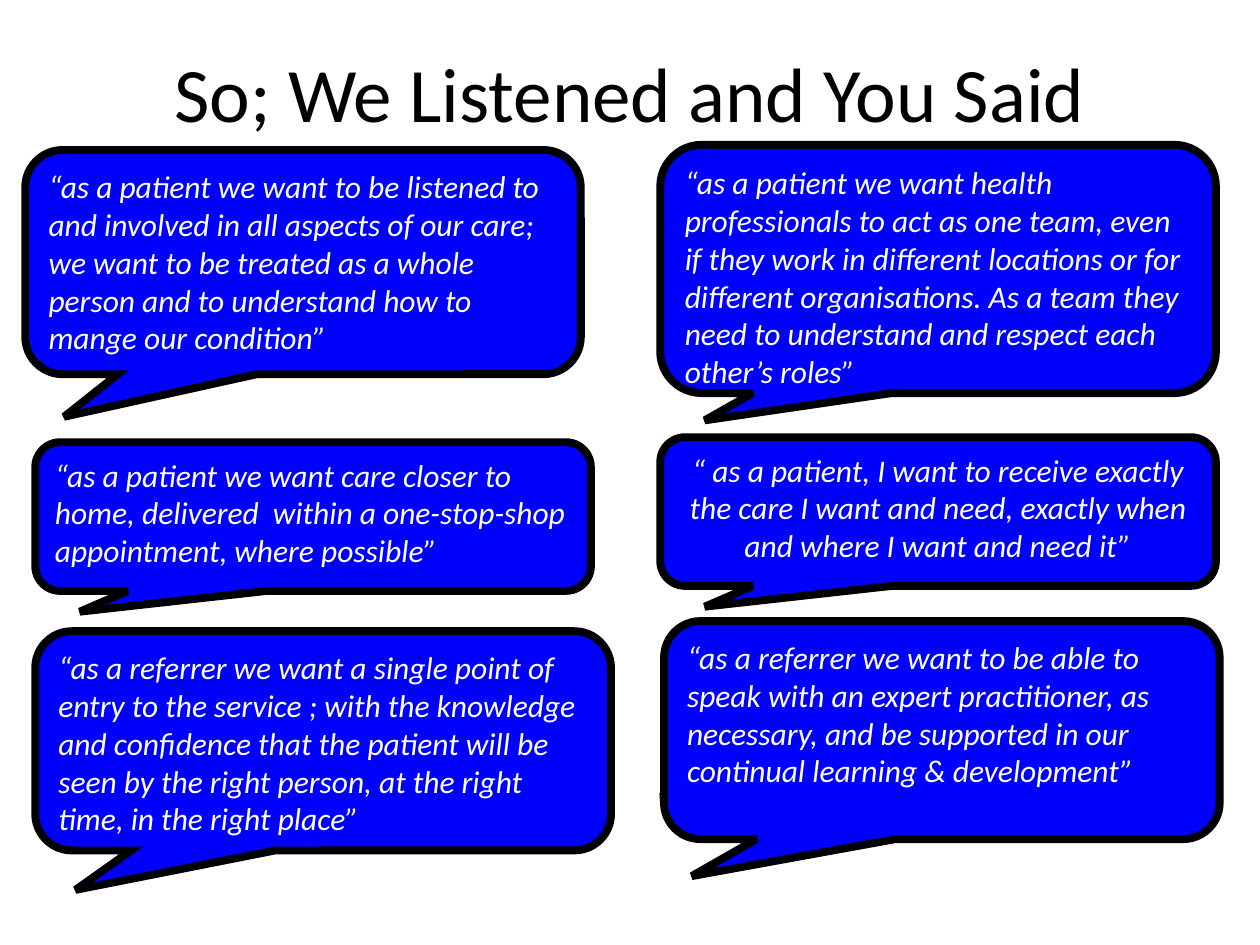
from lxml.etree import SubElement
from pptx import Presentation
from pptx.dml.color import RGBColor
from pptx.enum.shapes import MSO_SHAPE as SHAPE
from pptx.enum.text import MSO_ANCHOR as ANCHOR, PP_ALIGN as ALIGN
from pptx.oxml.ns import qn
from pptx.util import Inches, Pt

TITLE_FONT = {"name": "Calibri", "size": Pt(44)}
QUOTE_FONT = {"name": "Calibri", "size": Pt(18), "italic": True}
CORNER = 0.167

# box (left, top, width, height), tail tip (x, y), alignment, quote
CALLOUTS = [
    ((5.24, 1.15, 4.41, 1.97), (-0.42, 0.61), ALIGN.LEFT,
     "“as a patient we want health professionals to act as one team, even if they "
     "work in different locations or for different organisations. As a team they "
     "need to understand and respect each other’s roles”"),
    ((0.28, 5.01, 4.57, 1.74), (-0.43, 0.68), ALIGN.LEFT,
     "“as a referrer we want a single point of entry to the service ; with the "
     "knowledge  and confidence that the patient will be seen by the right person, "
     "at the right time, in the right place”"),
    ((0.28, 3.51, 4.41, 1.18), (-0.42, 0.64), ALIGN.LEFT,
     "“as a patient we want care closer to home, delivered  within a one-stop-shop "
     "appointment, where possible”"),
    ((0.2, 1.19, 4.41, 1.78), (-0.43, 0.69), ALIGN.LEFT,
     "“as a patient we want to be listened to and involved in all aspects of our "
     "care; we want to be treated as a whole person and to understand how to mange "
     "our condition”"),
    ((5.27, 4.93, 4.41, 1.73), (-0.45, 0.67), ALIGN.LEFT,
     "“as a referrer we want to be able to speak with an expert practitioner, as "
     "necessary, and be supported in our continual learning & development”"),
    ((5.24, 3.47, 4.41, 1.18), (-0.42, 0.64), ALIGN.CENTER,
     "“ as a patient, I want to receive exactly the care I want and need, exactly "
     "when and where I want and need it”"),
]


def rgb(color):
    return RGBColor.from_string(color)


def write(shape, text, font, color, anchor, align):
    tf = shape.text_frame
    tf.word_wrap = True
    tf.vertical_anchor = anchor
    p = tf.paragraphs[0]
    p.alignment = align
    r = p.add_run()
    r.text = text
    for name, value in font.items():
        setattr(r.font, name, value)
    r.font.color.rgb = rgb(color)


def add_title(slide, text):
    title = slide.shapes.title
    box = {"left": 0.5, "top": 0.3, "width": 9, "height": 0.85}
    for name, value in box.items():
        setattr(title, name, Inches(value))
    write(title, text, TITLE_FONT, "000000", ANCHOR.MIDDLE, ALIGN.CENTER)


def add_callout(slide, box, tip, align, text):
    sp = slide.shapes.add_shape(SHAPE.ROUNDED_RECTANGULAR_CALLOUT, *map(Inches, box))
    for i, value in enumerate((*tip, CORNER)):
        sp.adjustments[i] = value
    sp.shadow.inherit = False
    sp.fill.solid()
    sp.fill.fore_color.rgb = rgb("0000FF")
    sp.line.color.rgb = rgb("000000")
    sp.line.width = Pt(4.5)
    SubElement(sp.line._get_or_add_ln(), qn("a:miter"), lim="800000")
    write(sp, text, QUOTE_FONT, "FFFFFF", ANCHOR.TOP, align)


def main():
    prs = Presentation()
    prs.slide_width, prs.slide_height = Inches(10), Inches(7.5)
    slide = prs.slides.add_slide(prs.slide_layouts[5])
    add_title(slide, "So; We Listened and You Said")
    for callout in CALLOUTS:
        add_callout(slide, *callout)
    prs.save("out.pptx")


if __name__ == "__main__":
    main()
